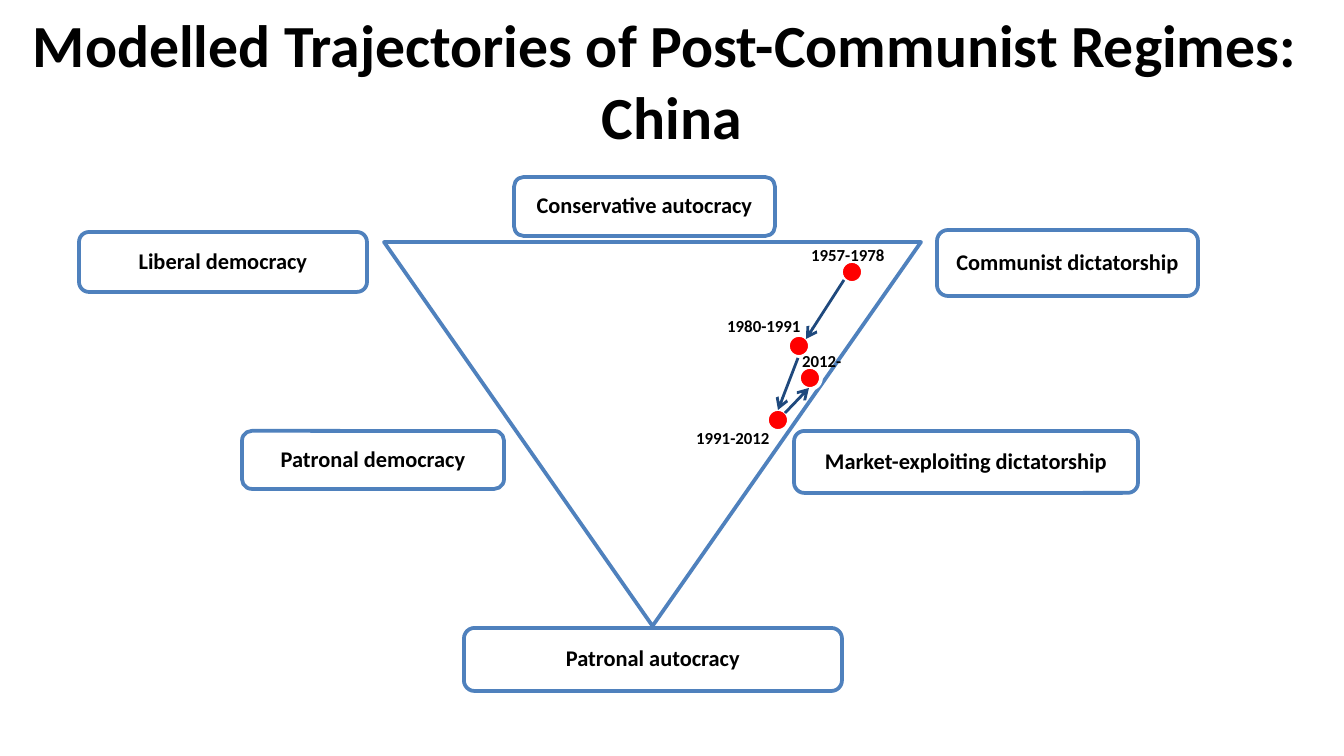
import pptx
import pptx.util
import pptx.dml.color
import pptx.enum.shapes
import pptx.enum.text
import pptx.oxml.ns
import lxml.etree

RGB = pptx.dml.color.RGBColor
SHAPE = pptx.enum.shapes.MSO_SHAPE
ALIGN = pptx.enum.text.PP_ALIGN
BLACK = RGB(0, 0, 0)
WHITE = RGB(255, 255, 255)
BLUE = RGB(0x4F, 0x81, 0xBD)
NAVY = RGB(0x1F, 0x49, 0x7D)
RED = RGB(255, 0, 0)
FONT = "Calibri"
PX_PER_INCH = 134.4

TITLE = ("Modelled Trajectories of Post-Communist Regimes: ", "China")
TRIANGLE = (384, 242, 537, 384)
REGIMES = [
    ("Communist dictatorship", (937, 230, 261, 66)),
    ("Liberal democracy", (79, 232, 288, 60)),
    ("Patronal autocracy", (464, 628, 378, 63)),
    ("Conservative autocracy", (514, 177, 261, 59)),
    ("Market-exploiting dictatorship", (794, 431, 344, 62)),
    ("Patronal democracy", (242, 431, 262, 58)),
]
PERIODS = [
    ("1957-1978", (852, 272), (798, 238)),
    ("1980-1991", (799, 346), (714, 309)),
    ("1991-2012", (778, 420), (683, 421)),
    ("2012-", (810, 378), (789, 344)),
]
MOVES = [
    ((844, 280), (806, 339)),
    ((798, 358), (778, 410)),
    ((785, 413), (809, 388)),
]
DOT = 22
LABEL_SIZE = (137, 34)


def px(*lengths):
    return [pptx.util.Inches(length / PX_PER_INCH) for length in lengths]


def style_text(paragraph, size):
    paragraph.font.name = FONT
    paragraph.font.size = pptx.util.Pt(size)
    paragraph.font.bold = True
    paragraph.font.color.rgb = BLACK


def add_outline(kind, box, line):
    shape = slide.shapes.add_shape(kind, *px(*box))
    shape.shadow.inherit = False
    shape.line.color.rgb = line
    shape.line.width = pptx.util.Pt(2)
    return shape


def fill_solid(shape, color):
    shape.fill.solid()
    shape.fill.fore_color.rgb = color


def add_regime(name, box):
    regime = add_outline(SHAPE.ROUNDED_RECTANGLE, box, BLUE)
    fill_solid(regime, WHITE)
    color = regime.fill._xPr.find(".//" + pptx.oxml.ns.qn("a:srgbClr"))
    lxml.etree.SubElement(color, pptx.oxml.ns.qn("a:alpha"), val="90000")
    frame = regime.text_frame
    frame.word_wrap = True
    frame.vertical_anchor = pptx.enum.text.MSO_ANCHOR.MIDDLE
    frame.margin_left = frame.margin_right = px(7)[0]
    frame.margin_top = frame.margin_bottom = px(7)[0]
    paragraph = frame.paragraphs[0]
    paragraph.text = name
    paragraph.alignment = ALIGN.CENTER
    paragraph.line_spacing = 0.9
    style_text(paragraph, 12)


def add_move(start, end):
    move = slide.shapes.add_connector(
        pptx.enum.shapes.MSO_CONNECTOR.STRAIGHT, *px(*start, *end))
    move.line.color.rgb = NAVY
    move.line.width = pptx.util.Pt(1.5)
    lxml.etree.SubElement(
        move.line._get_or_add_ln(), pptx.oxml.ns.qn("a:tailEnd"), type="arrow")
    lxml.etree.SubElement(
        move._element.spPr, pptx.oxml.ns.qn("a:effectLst"))


def add_label(period, corner):
    label = slide.shapes.add_textbox(*px(*corner, *LABEL_SIZE))
    label.text_frame.word_wrap = True
    paragraph = label.text_frame.paragraphs[0]
    paragraph.text = period
    style_text(paragraph, 9)


deck = pptx.Presentation()
deck.slide_width, deck.slide_height = px(1344, 756)
slide = deck.slides.add_slide(deck.slide_layouts[5])

title = slide.shapes.title
title.left, title.top, title.width, title.height = px(0, 28, 1344, 104)
title.text_frame.auto_size = pptx.enum.text.MSO_AUTO_SIZE.NONE
title.text_frame.vertical_anchor = pptx.enum.text.MSO_ANCHOR.MIDDLE
heading = title.text_frame.paragraphs[0]
heading.add_run().text = TITLE[0]
heading.add_line_break()
heading.add_run().text = TITLE[1]
heading.alignment = ALIGN.CENTER
style_text(heading, 32)

triangle = add_outline(SHAPE.ISOSCELES_TRIANGLE, TRIANGLE, BLUE)
triangle.rotation = 180
triangle.fill.background()

for name, box in REGIMES:
    add_regime(name, box)

for period, (x, y), corner in PERIODS:
    dot = add_outline(SHAPE.OVAL, (x - DOT / 2, y - DOT / 2, DOT, DOT), WHITE)
    fill_solid(dot, RED)

for start, end in MOVES:
    add_move(start, end)

for period, center, corner in PERIODS:
    add_label(period, corner)

deck.save("out.pptx")
